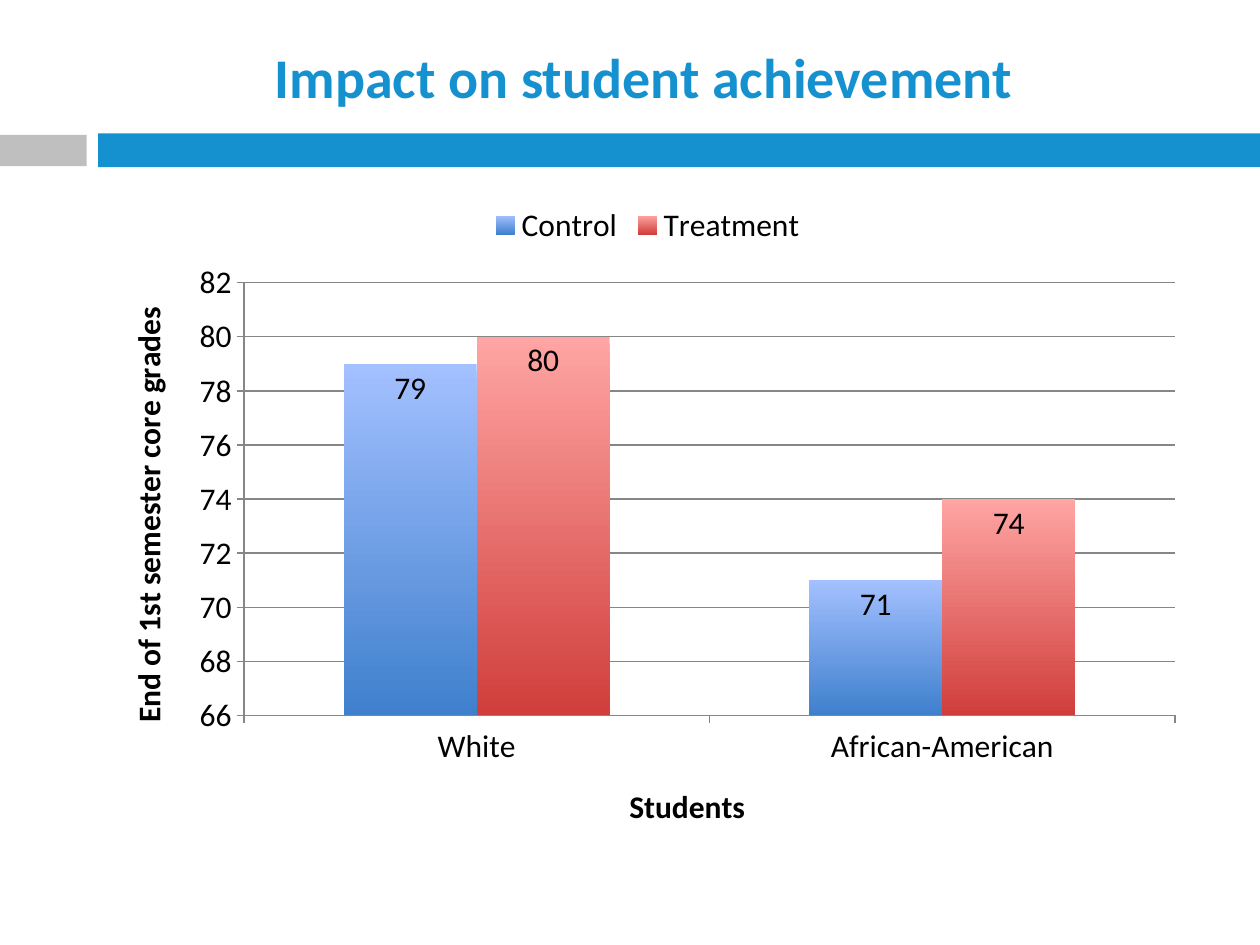
from dataclasses import dataclass

from pptx import Presentation
from pptx.chart.data import CategoryChartData as ChartData
from pptx.dml.color import RGBColor as RGB
from pptx.enum.chart import (
    XL_CHART_TYPE as Kind,
    XL_LABEL_POSITION as LabelPos,
    XL_LEGEND_POSITION as LegendPos,
    XL_TICK_MARK as Tick,
)
from pptx.enum.shapes import MSO_SHAPE as Shape
from pptx.enum.text import MSO_ANCHOR as Anchor, PP_ALIGN as Align
from pptx.oxml.ns import qn
from pptx.util import Cm, Pt


@dataclass(frozen=True)
class Theme:
    font: str = "Calibri"
    blue: str = "1691D0"
    gray: str = "BFBFBF"
    line: str = "868686"
    ink: str = "000000"
    head: int = 32
    body: int = 18


@dataclass(frozen=True)
class Box:
    left: float
    top: float
    width: float
    height: float

    def place(self) -> tuple:
        return Cm(self.left), Cm(self.top), Cm(self.width), Cm(self.height)


@dataclass(frozen=True)
class Group:
    name: str
    marks: tuple
    light: str
    dark: str


THEME = Theme()
BANDS = (
    (Box(1.98, 2.69, 23.42, 0.68), THEME.blue),
    (Box(0, 2.72, 1.75, 0.63), THEME.gray),
)
HEAD = Box(1.98, 0.66, 22, 1.73)
PLOT = Box(1.98, 3.84, 22.15, 13.44)
RACES = ("White", "African-American")
GROUPS = (
    Group("Control", (79, 71), "A3C0FF", "3F80CD"),
    Group("Treatment", (80, 74), "FFA5A3", "D03E3B"),
)


def style(font, size: int, color: str, bold: bool = False) -> None:
    font.name = THEME.font
    font.size = Pt(size)
    font.bold = bold
    font.color.rgb = RGB.from_string(color)


def add_band(slide, box: Box, color: str) -> None:
    band = slide.shapes.add_shape(Shape.RECTANGLE, *box.place())
    band.shadow.inherit = False
    band.fill.solid()
    band.fill.fore_color.rgb = RGB.from_string(color)
    band.line.fill.background()


def add_head(slide, box: Box, text: str) -> None:
    frame = slide.shapes.add_textbox(*box.place()).text_frame
    frame.word_wrap = True
    frame.vertical_anchor = Anchor.MIDDLE
    frame.text = text
    line = frame.paragraphs[0]
    line.alignment = Align.CENTER
    style(line.runs[0].font, THEME.head, THEME.blue, True)


def set_axis(axis, title: str, turn: int = 0) -> None:
    frame = axis.axis_title.text_frame
    frame.text = title
    style(frame.paragraphs[0].runs[0].font, THEME.body, THEME.ink, True)
    body = next(axis.axis_title._element.iter(qn("a:bodyPr")))
    body.set("rot", str(turn * 60000))
    body.set("vert", "horz")
    axis.major_tick_mark = Tick.OUTSIDE
    axis.minor_tick_mark = Tick.NONE
    axis.format.line.color.rgb = RGB.from_string(THEME.line)


def set_bars(bars, group: Group) -> None:
    bars.invert_if_negative = False
    fill = bars.format.fill
    fill.gradient()
    fill.gradient_angle = 270
    for stop, color in zip(fill.gradient_stops, (group.light, group.dark)):
        stop.color.rgb = RGB.from_string(color)
    labels = bars.data_labels
    labels.show_value = True
    labels.position = LabelPos.INSIDE_END
    labels.number_format = "0"
    labels.number_format_is_linked = False
    style(labels.font, THEME.body, THEME.ink)


def add_plot(slide, box: Box) -> None:
    data = ChartData(number_format="0")
    data.categories = RACES
    for group in GROUPS:
        data.add_series(group.name, group.marks)
    chart = slide.shapes.add_chart(
        Kind.COLUMN_CLUSTERED, *box.place(), data).chart
    style(chart.font, THEME.body, THEME.ink)
    chart.has_title = False

    # Legend
    chart.has_legend = True
    chart.legend.position = LegendPos.TOP
    chart.legend.include_in_layout = False

    # Axes
    set_axis(chart.category_axis, "Students")
    marks = chart.value_axis
    set_axis(marks, "End of 1st semester core grades", -90)
    marks.minimum_scale, marks.maximum_scale = 66, 82
    marks.major_unit = 2
    marks.tick_labels.number_format = "0"
    marks.tick_labels.number_format_is_linked = False
    marks.major_gridlines.format.line.color.rgb = RGB.from_string(THEME.line)

    # Bars
    plot = chart.plots[0]
    plot.gap_width = 150
    plot.overlap = 0
    plot.vary_by_categories = False
    for bars, group in zip(plot.series, GROUPS):
        set_bars(bars, group)


def main() -> None:
    deck = Presentation()
    deck.slide_width, deck.slide_height = Cm(25.4), Cm(19.05)
    slide = deck.slides.add_slide(deck.slide_layouts[6])
    for box, color in BANDS:
        add_band(slide, box, color)
    add_head(slide, HEAD, "Impact on student achievement")
    add_plot(slide, PLOT)
    deck.save("out.pptx")


if __name__ == "__main__":
    main()
